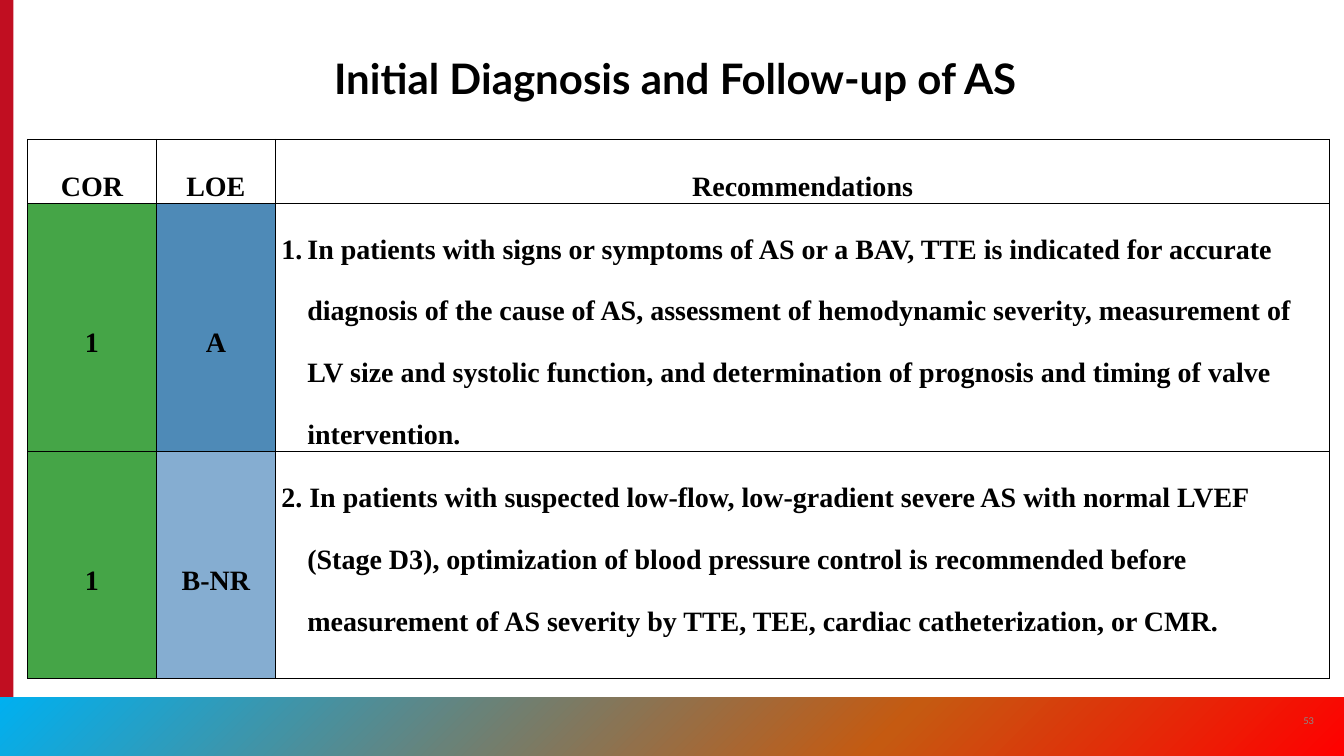
from copy import deepcopy
from dataclasses import dataclass

from lxml import etree
from pptx import Presentation
from pptx import util as u
from pptx.dml.color import RGBColor
from pptx.enum import shapes, text
from pptx.oxml.ns import qn


@dataclass(frozen=True)
class Theme:
    heading_font: str = "Lato"
    table_font: str = "Times New Roman"
    title_size: int = 36
    table_size: int = 24
    table_line_pitch: int = 53
    number_size: int = 8
    ink: str = "000000"
    grey: str = "8A8B8A"
    red_bar: str = "C10E21"
    class_1: str = "45A547"
    level_a: str = "4E8AB7"
    level_b: str = "85ADD1"
    band: tuple = ((0, "00B0F0"), (0.66, "C55A11"), (1, "FF0000"))


THEME = Theme()
COLUMN_WIDTHS = (1.53, 1.42, 12.55)
ROW_HEIGHTS = (0.76, 2.96, 2.7)
ROWS = (
    ("COR", "LOE", "Recommendations"),
    ("1", "A",
     "In patients with signs or symptoms of AS or a BAV, TTE is indicated for "
     "accurate diagnosis of the cause of AS, assessment of hemodynamic severity, "
     "measurement of LV size and systolic function, and determination of "
     "prognosis and timing of valve intervention."),
    ("1", "B-NR",
     "2. In patients with suspected low-flow, low-gradient severe AS with normal "
     "LVEF (Stage D3), optimization of blood pressure control is recommended "
     "before measurement of AS severity by TTE, TEE, cardiac catheterization, "
     "or CMR."),
)
CELL_FILLS = {
    (1, 0): THEME.class_1, (1, 1): THEME.level_a,
    (2, 0): THEME.class_1, (2, 1): THEME.level_b,
}


def set_all(target, values):
    for name, value in values.items():
        setattr(target, name, value)


def inches(*lengths):
    return [u.Inches(length) for length in lengths]


def write(frame, words, font, size, color, bold=False, spacing=1.0,
          align=text.PP_ALIGN.CENTER):
    """Fill a text frame with one formatted paragraph and return it."""
    para = frame.paragraphs[0]
    set_all(para, {"alignment": align, "line_spacing": spacing,
                   "space_before": u.Pt(0)})
    span = para.add_run()
    span.text = words
    set_all(span.font, {"name": font, "size": u.Pt(size), "bold": bold})
    span.font.color.rgb = RGBColor.from_string(color)
    return para


def add_rectangle(page, *place):
    box = page.shapes.add_shape(shapes.MSO_SHAPE.RECTANGLE, *inches(*place))
    box.shadow.inherit = False
    box.line.fill.background()
    return box


def add_side_bar(page):
    bar = add_rectangle(page, 0, 0, 0.16, 9)
    bar.fill.solid()
    bar.fill.fore_color.rgb = RGBColor.from_string(THEME.red_bar)


def add_footer_band(page):
    fill = add_rectangle(page, 0, 8.3, 16, 0.7).fill
    fill.gradient()
    fill.gradient_angle = 315
    first = fill._fill._gradFill.find(qn("a:gsLst"))[0]
    first.addnext(deepcopy(first))
    for stop, (position, color) in zip(fill.gradient_stops, THEME.band):
        stop.position = position
        stop.color.rgb = RGBColor.from_string(color)


def add_title(page, words):
    title = page.shapes.title
    left, top, width, height = inches(2.25, 0.42, 11.58, 0.86)
    set_all(title, {"left": left, "top": top, "width": width, "height": height})
    set_all(title.text_frame, {"vertical_anchor": text.MSO_ANCHOR.BOTTOM,
                               "word_wrap": True,
                               "auto_size": text.MSO_AUTO_SIZE.NONE})
    write(title.text_frame, words, THEME.heading_font, THEME.title_size,
          THEME.ink, bold=True, spacing=0.9)


def add_page_number(page, number):
    frame = page.shapes.add_textbox(*inches(15.34, 8.34, 0.48, 0.48)).text_frame
    set_all(frame, {"word_wrap": True, "vertical_anchor": text.MSO_ANCHOR.MIDDLE})
    write(frame, number, THEME.heading_font, THEME.number_size, THEME.grey)


def add_borders(cell):
    properties = cell._tc.get_or_add_tcPr()
    for index, side in enumerate(("lnL", "lnR", "lnT", "lnB")):
        line = etree.Element(qn(f"a:{side}"), w=str(u.Pt(1)))
        solid = etree.SubElement(line, qn("a:solidFill"))
        etree.SubElement(solid, qn("a:srgbClr"), val=THEME.ink)
        properties.insert(index, line)


def hang(para, numbered):
    """Give a paragraph a hanging indent and, if wanted, an automatic number."""
    properties = para._p.get_or_add_pPr()
    indent = u.Inches(0.31)
    properties.set("marL", str(indent))
    properties.set("indent", str(-indent))
    if numbered:
        etree.SubElement(properties, qn("a:buFont"), typeface="+mj-lt")
        etree.SubElement(properties, qn("a:buAutoNum"), type="arabicPeriod")


def fill_cell(cell, words, color, is_advice):
    set_all(cell, {
        "margin_left": u.Inches(0.07), "margin_right": u.Inches(0.07),
        "margin_top": 0, "margin_bottom": 0,
        "vertical_anchor": text.MSO_ANCHOR.TOP if is_advice
        else text.MSO_ANCHOR.MIDDLE,
    })
    if color:
        cell.fill.solid()
        cell.fill.fore_color.rgb = RGBColor.from_string(color)
    else:
        cell.fill.background()
    add_borders(cell)
    align = text.PP_ALIGN.LEFT if is_advice else text.PP_ALIGN.CENTER
    # An exact line pitch keeps every row at its set height.
    para = write(cell.text_frame, words, THEME.table_font, THEME.table_size,
                 THEME.ink, bold=True, spacing=u.Pt(THEME.table_line_pitch),
                 align=align)
    if is_advice:
        hang(para, numbered=not words[0].isdigit())


def add_recommendations(page):
    table = page.shapes.add_table(
        len(ROWS), len(COLUMN_WIDTHS),
        *inches(0.33, 1.66, sum(COLUMN_WIDTHS), sum(ROW_HEIGHTS))).table
    set_all(table, {"first_row": False, "horz_banding": False})
    for column, width in zip(table.columns, COLUMN_WIDTHS):
        column.width = u.Inches(width)
    for row, height in zip(table.rows, ROW_HEIGHTS):
        row.height = u.Inches(height)
    for r, row in enumerate(ROWS):
        for c, words in enumerate(row):
            fill_cell(table.cell(r, c), words, CELL_FILLS.get((r, c)),
                      is_advice=r > 0 and c == 2)


def main():
    deck = Presentation()
    set_all(deck, {"slide_width": u.Inches(16), "slide_height": u.Inches(9)})
    page = deck.slides.add_slide(deck.slide_layouts.get_by_name("Title Only"))
    add_side_bar(page)
    add_footer_band(page)
    add_title(page, "Initial Diagnosis and Follow-up of AS")
    add_page_number(page, "53")
    add_recommendations(page)
    deck.save("out.pptx")


if __name__ == "__main__":
    main()
